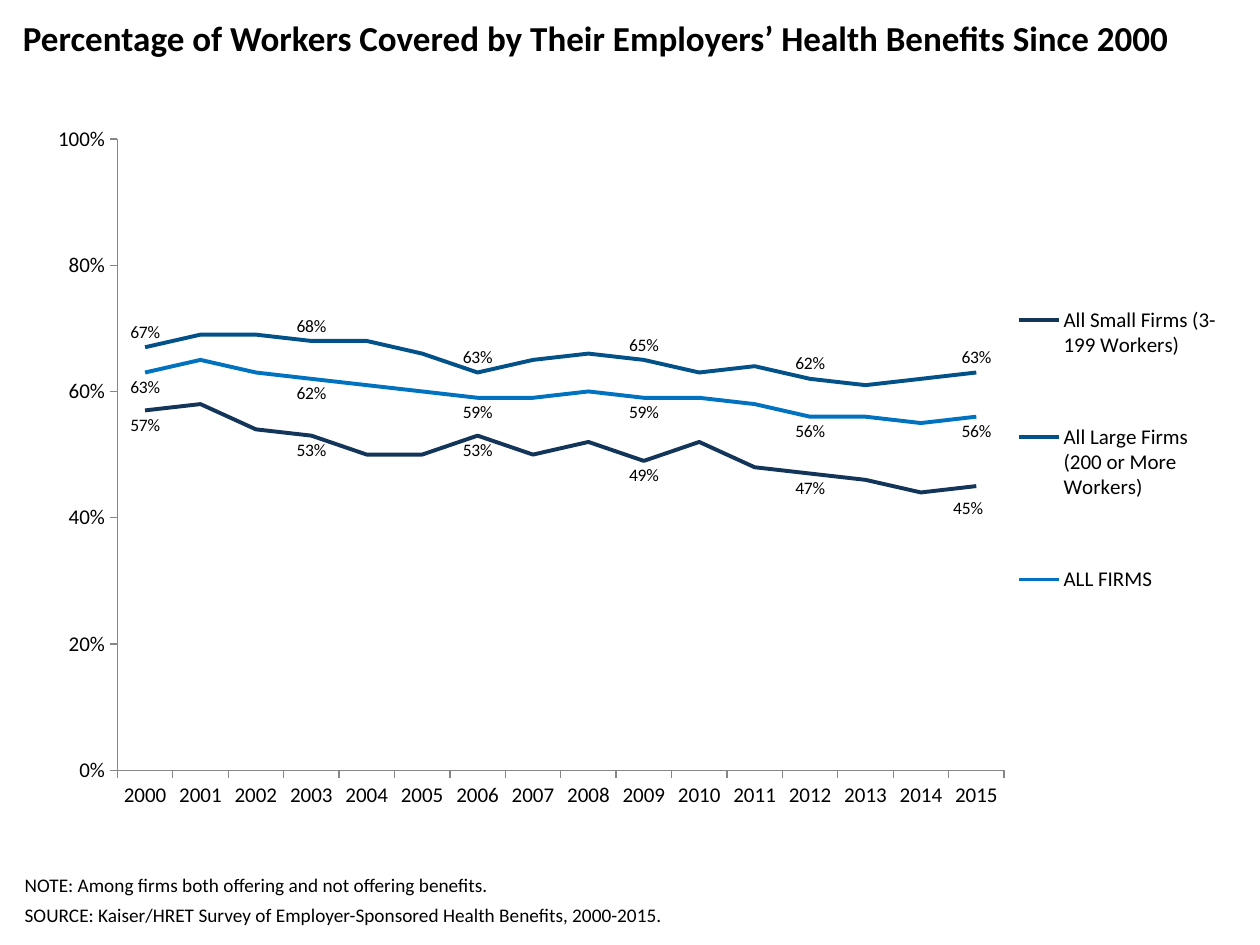
"""Build a slide charting worker coverage by employer health benefits since 2000."""
from pptx import Presentation
from pptx.chart.data import CategoryChartData
from pptx.dml.color import RGBColor
from pptx.enum.chart import XL_CHART_TYPE, XL_LABEL_POSITION, XL_LEGEND_POSITION, XL_MARKER_STYLE, XL_TICK_MARK
from pptx.enum.text import MSO_ANCHOR
from pptx.oxml.ns import qn
from pptx.oxml.xmlchemy import OxmlElement
from pptx.util import Pt

ABOVE, BELOW = XL_LABEL_POSITION.ABOVE, XL_LABEL_POSITION.BELOW
TOP, BOTTOM = MSO_ANCHOR.TOP, MSO_ANCHOR.BOTTOM
LINE = XL_CHART_TYPE.LINE
RIGHT = XL_LEGEND_POSITION.RIGHT
NO_MARKER = XL_MARKER_STYLE.NONE
OUTSIDE, NO_TICK = XL_TICK_MARK.OUTSIDE, XL_TICK_MARK.NONE

FONT, BLACK, AXIS_GRAY = "Calibri", "000000", "868686"
TITLE = "Percentage of Workers Covered by Their Employers’ Health Benefits Since 2000"
NOTES = [
    "NOTE: Among firms both offering and not offering benefits.",
    "SOURCE: Kaiser/HRET Survey of Employer-Sponsored Health Benefits, 2000-2015.",
]
YEARS = [str(year) for year in range(2000, 2016)]
SERIES = [
    ("All Small Firms (3-199 Workers)", "133559", BELOW,
     [57, 58, 54, 53, 50, 50, 53, 50, 52, 49, 52, 48, 47, 46, 44, 45]),
    ("All Large Firms (200 or More Workers)", "025189", ABOVE,
     [67, 69, 69, 68, 68, 66, 63, 65, 66, 65, 63, 64, 62, 61, 62, 63]),
    ("ALL FIRMS", "0072C0", BELOW,
     [63, 65, 63, 62, 61, 60, 59, 59, 60, 59, 59, 58, 56, 56, 55, 56]),
]
LABEL_STEP = 3


def color(hex_string):
    return RGBColor.from_string(hex_string)


def style_font(font, size, bold=False):
    font.name, font.size, font.bold = FONT, Pt(size), bold
    font.color.rgb = color(BLACK)


def add_text(slide, box, lines, size, anchor, bold=False, space_after=0):
    frame = slide.shapes.add_textbox(*map(Pt, box)).text_frame
    frame.word_wrap = True
    frame.vertical_anchor = anchor
    frame.text = "\n".join(lines)
    for paragraph in frame.paragraphs:
        paragraph.space_after = Pt(space_after)
        style_font(paragraph.font, size, bold)


def set_layout(parent, index, **settings):
    for old in parent.findall(qn("c:layout")):
        parent.remove(old)
    layout, manual = OxmlElement("c:layout"), OxmlElement("c:manualLayout")
    for name, value in settings.items():
        setting = OxmlElement(f"c:{name}")
        setting.set("val", str(value))
        manual.append(setting)
    layout.append(manual)
    parent.insert(index, layout)


def style_axis(axis):
    axis.has_major_gridlines = False
    axis.major_tick_mark, axis.minor_tick_mark = OUTSIDE, NO_TICK
    axis.format.line.color.rgb = color(AXIS_GRAY)
    axis.format.line.width = Pt(0.75)
    style_font(axis.tick_labels.font, 12)


def style_series(series, line_color, position):
    series.smooth = False
    series.marker.style = NO_MARKER
    series.format.line.color.rgb = color(line_color)
    series.format.line.width = Pt(2.25)
    series.data_labels.show_value = False
    for index in range(0, len(YEARS), LABEL_STEP):
        label = series.points[index].data_label
        style_font(label.font, 10)
        label.position = position


def add_coverage_chart(slide, box):
    data = CategoryChartData(number_format="0%")
    data.categories = YEARS
    for name, _, _, percents in SERIES:
        data.add_series(name, [percent / 100 for percent in percents])
    chart = slide.shapes.add_chart(LINE, *map(Pt, box), data).chart
    chart.has_title = False
    style_font(chart.font, 18)

    plot = chart.plots[0]
    plot.vary_by_categories = False
    for series, (_, line_color, position, _) in zip(plot.series, SERIES):
        style_series(series, line_color, position)
    last_small_label = plot.series[0]._element.findall(".//" + qn("c:dLbl"))[-1]
    set_layout(last_small_label, 1, x=-0.007, y=0.011)

    style_axis(chart.category_axis)
    value_axis = chart.value_axis
    style_axis(value_axis)
    value_axis.minimum_scale, value_axis.maximum_scale, value_axis.major_unit = 0, 1, 0.2
    value_axis.tick_labels.number_format = "0%"
    value_axis.tick_labels.number_format_is_linked = False

    chart.has_legend = True
    legend = chart.legend
    legend.position = RIGHT
    legend.include_in_layout = False
    style_font(legend.font, 12)
    set_layout(legend._element, 1, xMode="edge", yMode="edge", x=0.83, y=0.17, w=0.17, h=0.57)
    set_layout(chart._chartSpace.chart.plotArea, 0, layoutTarget="inner", xMode="edge",
               yMode="edge", x=0.069, y=0.032, w=0.743, h=0.859)


def main():
    presentation = Presentation()
    presentation.slide_width, presentation.slide_height = Pt(720), Pt(540)
    slide = presentation.slides.add_slide(presentation.slide_layouts[6])
    add_text(slide, (6, 6, 706, 47), [TITLE], 20, TOP, bold=True)
    add_coverage_chart(slide, (20, 66, 682, 420))
    add_text(slide, (7, 510, 655, 23), NOTES, 11, BOTTOM, space_after=4)
    presentation.save("out.pptx")


if __name__ == "__main__":
    main()
